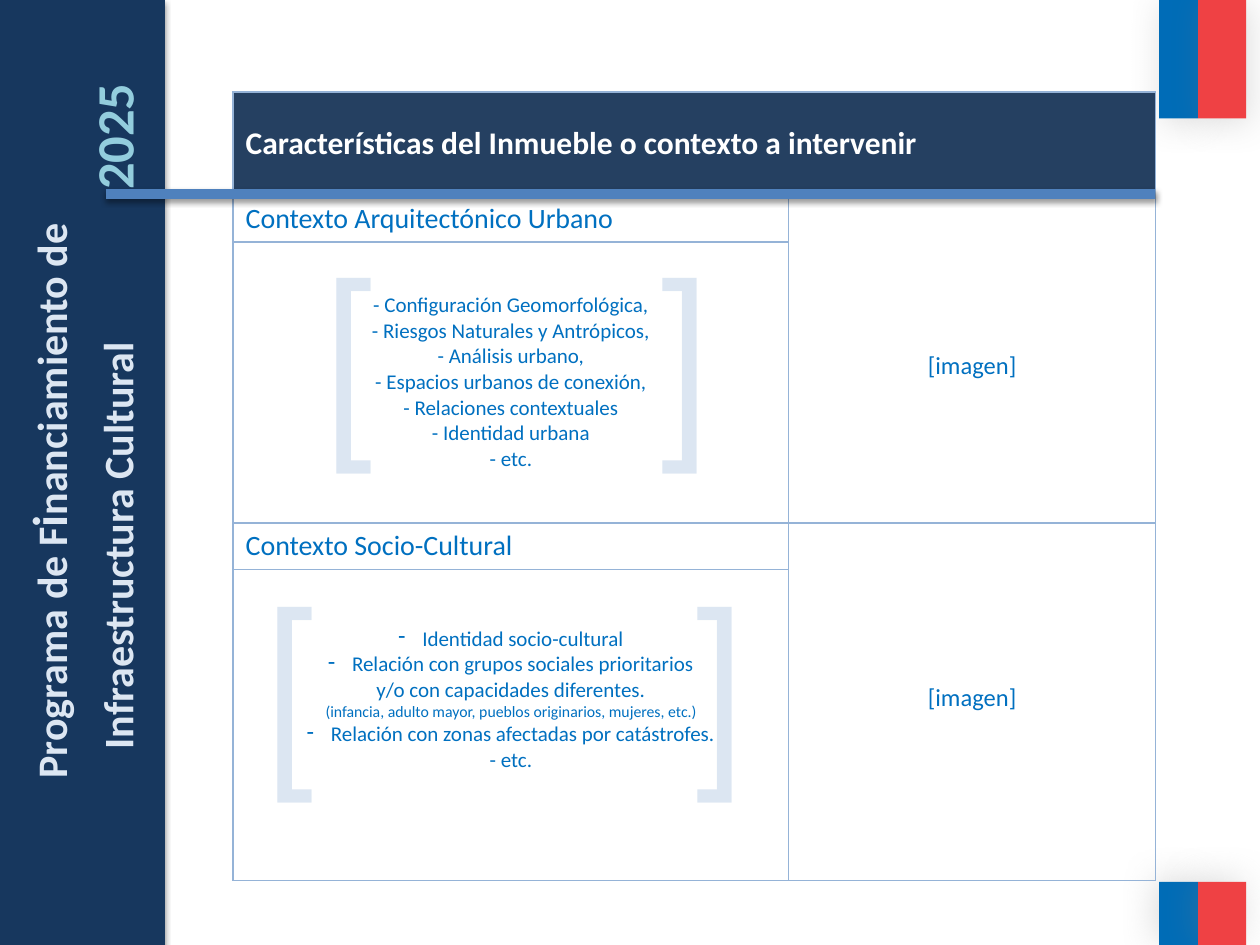
from dataclasses import dataclass

from lxml.etree import SubElement
from pptx import Presentation
from pptx.dml.color import RGBColor
from pptx.enum.shapes import MSO_CONNECTOR, MSO_SHAPE
from pptx.enum.text import MSO_ANCHOR, PP_ALIGN
from pptx.oxml.ns import qn
from pptx.util import Inches, Pt

WHITE = RGBColor(0xFF, 0xFF, 0xFF)
FLAG_BLUE = RGBColor(0x00, 0x6C, 0xB7)
FLAG_RED = RGBColor(0xEF, 0x41, 0x44)
NAVY = RGBColor(0x17, 0x37, 0x5E)
HEADER_NAVY = RGBColor(0x25, 0x40, 0x61)
TEXT_BLUE = RGBColor(0x00, 0x70, 0xC0)
RULE_BLUE = RGBColor(0x4F, 0x81, 0xBD)
BORDER_BLUE = RGBColor(0x95, 0xB3, 0xD7)
PALE_BLUE = RGBColor(0xDC, 0xE6, 0xF2)
YEAR_BLUE = RGBColor(0x93, 0xCD, 0xDD)


@dataclass
class Shadow:
    color: RGBColor
    alpha: int
    blur: float
    distance: float
    angle: int


@dataclass
class Band:
    left: float
    top: float
    width: float
    height: float
    color: RGBColor
    shadow: Shadow


@dataclass
class Span:
    text: str
    size: int
    color: RGBColor = PALE_BLUE


@dataclass
class Label:
    left: float
    top: float
    width: float
    height: float
    spans: list[Span]
    font: str = "Calibri"
    bold: bool = True
    rotation: int = 270
    align: PP_ALIGN = PP_ALIGN.LEFT


@dataclass
class Line:
    text: str
    size: int = 12
    bullet: bool = False


@dataclass
class CellText:
    row: int
    column: int
    lines: list[Line]
    align: PP_ALIGN = PP_ALIGN.CENTER
    anchor: MSO_ANCHOR = MSO_ANCHOR.TOP
    margin_top: float = 0.05
    color: RGBColor = TEXT_BLUE
    bold: bool = False


def add_color(parent, color: RGBColor):
    return SubElement(parent, qn("a:srgbClr"), val=str(color))


def add_shadow(effects, shadow: Shadow) -> None:
    outer = SubElement(effects, qn("a:outerShdw"), blurRad=str(Pt(shadow.blur)),
                       dist=str(Pt(shadow.distance)), dir=str(shadow.angle * 60000),
                       algn="ctr", rotWithShape="0")
    SubElement(add_color(outer, shadow.color), qn("a:alpha"), val=str(shadow.alpha * 1000))


def add_band(page, band: Band) -> None:
    shape = page.shapes.add_shape(MSO_SHAPE.RECTANGLE, Inches(band.left), Inches(band.top),
                                  Inches(band.width), Inches(band.height))
    shape.fill.solid()
    shape.fill.fore_color.rgb = band.color
    shape.line.fill.background()
    shape.shadow.inherit = False
    add_shadow(shape._element.spPr.find(qn("a:effectLst")), band.shadow)


def add_label(page, label: Label) -> None:
    box = page.shapes.add_textbox(Inches(label.left), Inches(label.top),
                                  Inches(label.width), Inches(label.height))
    box.rotation = label.rotation
    box.text_frame.word_wrap = True
    para = box.text_frame.paragraphs[0]
    para.alignment = label.align
    para.font.name = label.font
    para.font.bold = label.bold
    for span in label.spans:
        run = para.add_run()
        run.text = span.text
        run.font.size = Pt(span.size)
        run.font.color.rgb = span.color


def add_bullet(para, size: int) -> None:
    properties = para._p.get_or_add_pPr()
    properties.set("marL", str(Inches(0.19)))
    properties.set("indent", str(-Inches(0.19)))
    points = properties.makeelement(qn("a:buSzPts"), {"val": str(size * 100)})
    bullet = properties.makeelement(qn("a:buChar"), {"char": "-"})
    properties.insert(0, points)
    properties.insert(1, bullet)


def add_borders(cell) -> None:
    properties = cell._tc.get_or_add_tcPr()
    for index, side in enumerate(("lnL", "lnR", "lnT", "lnB")):
        border = properties.makeelement(qn(f"a:{side}"), {"w": str(Pt(1))})
        add_color(SubElement(border, qn("a:solidFill")), BORDER_BLUE)
        properties.insert(index, border)


def fill_cell(cell, content: CellText) -> None:
    cell.vertical_anchor = content.anchor
    cell.margin_top = Inches(content.margin_top)
    for index, line in enumerate(content.lines):
        frame = cell.text_frame
        para = frame.add_paragraph() if index else frame.paragraphs[0]
        para.text = line.text
        para.alignment = content.align
        para.font.name = "Calibri"
        para.font.size = Pt(line.size)
        para.font.bold = content.bold
        para.font.color.rgb = content.color
        if line.bullet:
            add_bullet(para, line.size)


def add_context_table(page, contents: list[CellText]) -> None:
    widths, heights = (4.41, 2.91), (0.82, 0.37, 2.23, 0.37, 2.47)
    table = page.shapes.add_table(len(heights), len(widths), Inches(1.85), Inches(0.73),
                                  Inches(sum(widths)), Inches(sum(heights))).table
    table.first_row = table.horz_banding = False
    for column, width in zip(table.columns, widths):
        column.width = Inches(width)
    for row, height in zip(table.rows, heights):
        row.height = Inches(height)
    for cell in table.iter_cells():
        cell.fill.background()
        add_borders(cell)
    header = table.cell(0, 0)
    header.merge(table.cell(0, 1))
    header.fill.solid()
    header.fill.fore_color.rgb = HEADER_NAVY
    for row in (1, 3):
        table.cell(row, 1).merge(table.cell(row + 1, 1))
    for content in contents:
        fill_cell(table.cell(content.row, content.column), content)


def add_rule(page) -> None:
    rule = page.shapes.add_connector(MSO_CONNECTOR.STRAIGHT, Inches(9.17), Inches(1.54),
                                     Inches(0.84), Inches(1.54))
    rule.line.color.rgb = RULE_BLUE
    rule.line.width = Pt(6)
    effects = SubElement(rule._element.spPr, qn("a:effectLst"))
    add_shadow(effects, Shadow(RGBColor(0, 0, 0), 38, 3.1, 1.6, 90))


URBAN = ["- Configuración Geomorfológica,", "- Riesgos Naturales y Antrópicos,",
         "- Análisis urbano,", "- Espacios urbanos de conexión,",
         "- Relaciones contextuales", "- Identidad urbana", "- etc."]
SOCIAL = [Line("Identidad socio-cultural", bullet=True),
          Line("Relación con grupos sociales prioritarios", bullet=True),
          Line("y/o con capacidades diferentes."),
          Line("(infancia, adulto mayor, pueblos originarios, mujeres, etc.)", 9),
          Line("Relación con zonas afectadas por catástrofes.", bullet=True),
          Line("- etc.")]
CONTENTS = [
    CellText(0, 0, [Line("Características del Inmueble o contexto a intervenir", 18)],
             PP_ALIGN.LEFT, MSO_ANCHOR.MIDDLE, color=WHITE, bold=True),
    CellText(1, 0, [Line("Contexto Arquitectónico Urbano", 16)], PP_ALIGN.LEFT),
    CellText(1, 1, [Line("[imagen]", 14)], margin_top=1.24),
    CellText(2, 0, [Line(text) for text in URBAN], anchor=MSO_ANCHOR.MIDDLE),
    CellText(3, 0, [Line("Contexto Socio-Cultural", 16)], PP_ALIGN.LEFT),
    CellText(3, 1, [Line("[imagen]", 14)], margin_top=1.27),
    CellText(4, 0, SOCIAL, margin_top=0.45),
]


def main() -> None:
    deck = Presentation()
    deck.slide_width, deck.slide_height = Inches(10), Inches(7.5)
    page = deck.slides.add_slide(deck.slide_layouts[6])
    for top, height, angle in ((0, 0.94, 45), (7, 0.5, 215)):
        shadow = Shadow(RGBColor(0x80, 0x80, 0x80), 25, 20, 3, angle)
        add_band(page, Band(9.2, top, 0.31, height, FLAG_BLUE, shadow))
        add_band(page, Band(9.51, top, 0.38, height, FLAG_RED, shadow))
    for top, opening, closing in ((4.31, 2.01, 5.43), (1.7, 2.48, 5.15)):
        for left, bracket in ((opening, "["), (closing, "]")):
            add_label(page, Label(left, top, 0.65, 2.12, [Span(bracket, 120)],
                                  "Arial Narrow", bold=False, rotation=0))
    add_band(page, Band(0, 0, 1.31, 7.5, NAVY, Shadow(RGBColor(0, 0, 0), 35, 3.1, 1.8, 90)))
    add_context_table(page, CONTENTS)
    add_rule(page)
    add_label(page, Label(-3.14, 3.69, 7.04, 0.57, [
        Span("Programa de F", 24), Span("i", 28), Span("nanciamiento de", 24)],
        align=PP_ALIGN.CENTER))
    add_label(page, Label(-0.82, 3.94, 3.6, 0.61, [Span("Infraestructura Cultural", 24)]))
    add_label(page, Label(0.3, 0.7, 1.2, 0.61, [Span("2025", 30, YEAR_BLUE)]))
    deck.save("out.pptx")


if __name__ == "__main__":
    main()
